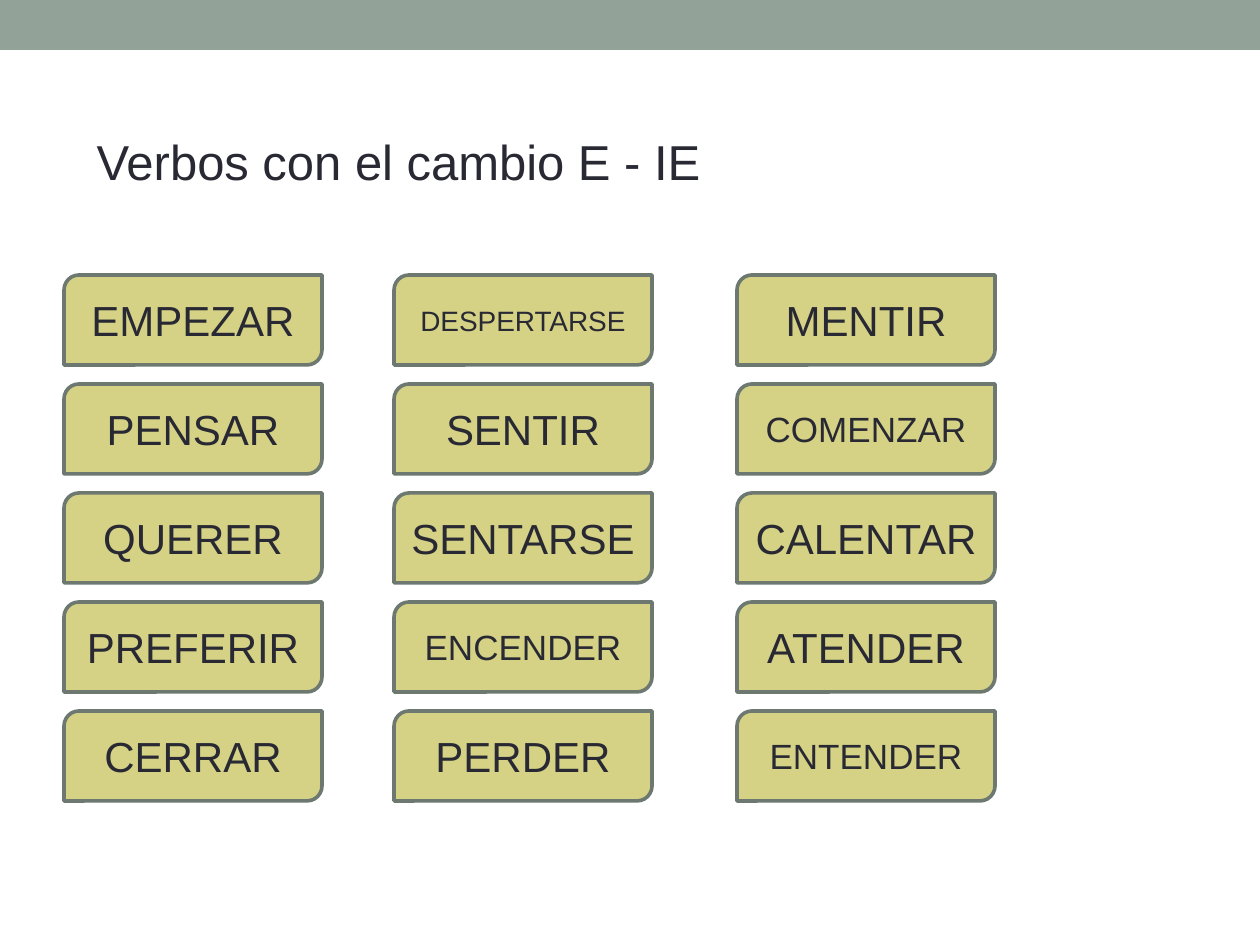
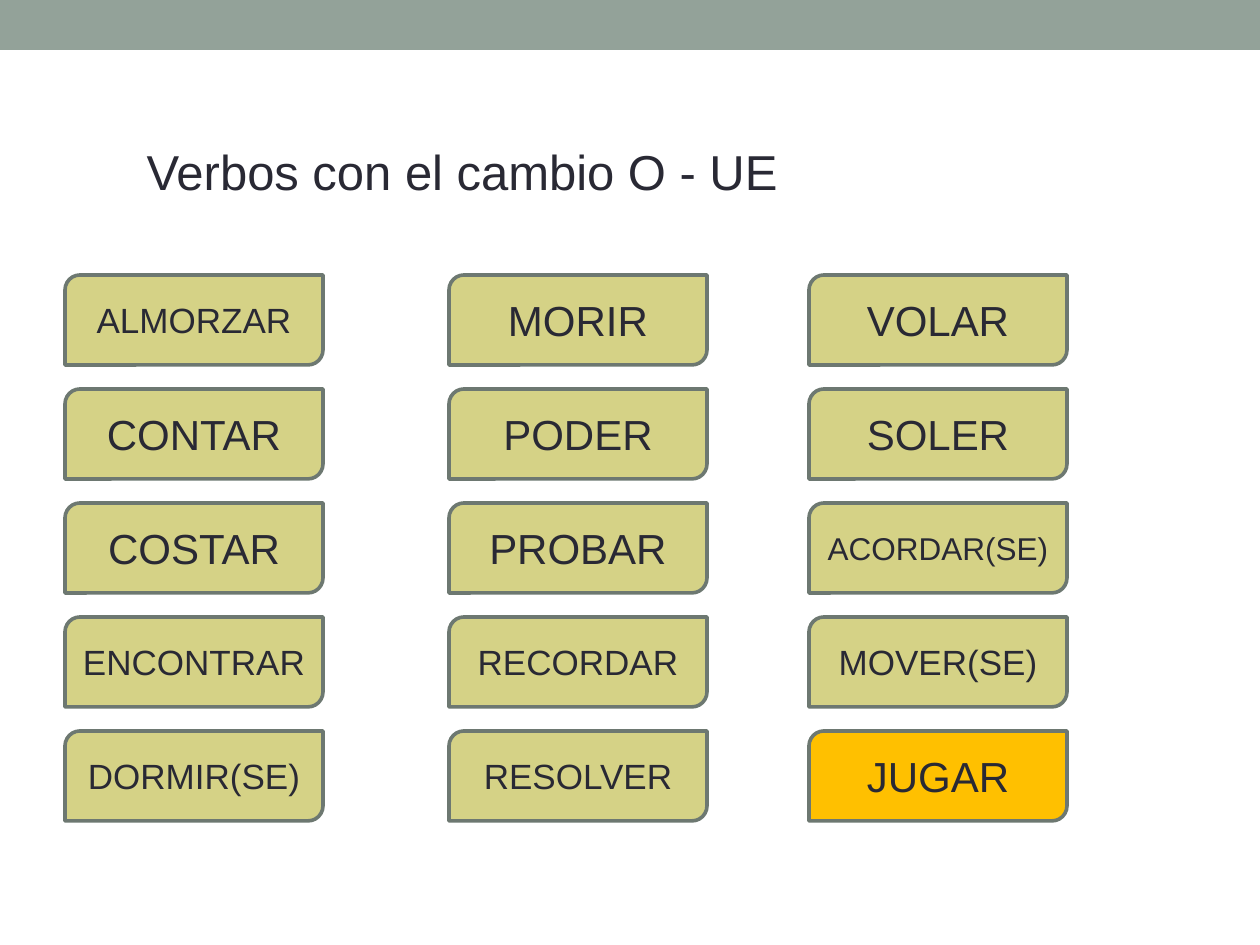
from dataclasses import dataclass

from pptx import Presentation
from pptx.dml.color import RGBColor
from pptx.enum.shapes import MSO_SHAPE
from pptx.enum.text import MSO_ANCHOR, MSO_AUTO_SIZE, PP_ALIGN
from pptx.util import Emu, Pt

EMU_PER_PX = 914400 / 126
SLIDE_W, SLIDE_H = 1260, 945
BAND_H = 50
CARD_W, CARD_H = 258, 90
CARDS_TOP = 275
TITLE_ONLY = 5


@dataclass(frozen=True)
class Theme:
    font: str = "Arial"
    band: RGBColor = RGBColor(0x93, 0xA2, 0x99)
    ink: RGBColor = RGBColor(0x29, 0x29, 0x34)
    card: RGBColor = RGBColor(0xD5, 0xD2, 0x86)
    highlight: RGBColor = RGBColor(0xFF, 0xC0, 0x00)
    outline: RGBColor = RGBColor(0x6D, 0x78, 0x71)
    outline_pt: float = 2.08
    title_pt: int = 28
    large: int = 24
    medium: int = 20
    small: int = 18
    tiny: int = 16


THEME = Theme()

# Verbs not listed here are set in the large size.
VERB_SIZES = {
    "DESPERTARSE": THEME.tiny,
    "ACORDAR(SE)": THEME.small,
    **dict.fromkeys(
        ["ENCENDER", "COMENZAR", "ENTENDER", "ALMORZAR", "ENCONTRAR",
         "DORMIR(SE)", "RECORDAR", "RESOLVER", "MOVER(SE)"],
        THEME.medium),
}
IRREGULAR = {"JUGAR"}

E_IE_COLUMNS = {
    64: ["EMPEZAR", "PENSAR", "QUERER", "PREFERIR", "CERRAR"],
    394: ["DESPERTARSE", "SENTIR", "SENTARSE", "ENCENDER", "PERDER"],
    737: ["MENTIR", "COMENZAR", "CALENTAR", "ATENDER", "ENTENDER"],
}
O_UE_COLUMNS = {
    65: ["ALMORZAR", "CONTAR", "COSTAR", "ENCONTRAR", "DORMIR(SE)"],
    449: ["MORIR", "PODER", "PROBAR", "RECORDAR", "RESOLVER"],
    809: ["VOLAR", "SOLER", "ACORDAR(SE)", "MOVER(SE)", "JUGAR"],
}


def px(n):
    return Emu(round(n * EMU_PER_PX))


def add_run(p, text, size):
    r = p.add_run()
    r.text = text
    r.font.name = THEME.font
    r.font.size = Pt(size)
    r.font.color.rgb = THEME.ink


def add_filled_shape(s, kind, x, y, w, h, color):
    sp = s.shapes.add_shape(kind, px(x), px(y), px(w), px(h))
    sp.shadow.inherit = False
    sp.fill.solid()
    sp.fill.fore_color.rgb = color
    return sp


def move_band_to_master(prs, s):
    """Draw the top band and place it behind everything on the master."""
    band = add_filled_shape(s, MSO_SHAPE.RECTANGLE, 0, 0, SLIDE_W, BAND_H,
                            THEME.band)
    band.line.fill.background()
    # The first two children of a shape tree are its properties.
    prs.slide_master.shapes.element.insert(2, band.element)


def set_title(s, text, x, y, w, h):
    title = s.shapes.title
    title.left, title.top, title.width, title.height = map(px, (x, y, w, h))
    tf = title.text_frame
    tf.word_wrap = False
    tf.auto_size = MSO_AUTO_SIZE.SHAPE_TO_FIT_TEXT
    tf.vertical_anchor = MSO_ANCHOR.TOP
    p = tf.paragraphs[0]
    p.alignment = PP_ALIGN.LEFT
    add_run(p, text, THEME.title_pt)


def add_verb_card(s, verb, x, y):
    color = THEME.highlight if verb in IRREGULAR else THEME.card
    sp = add_filled_shape(s, MSO_SHAPE.ROUND_2_DIAG_RECTANGLE, x, y,
                          CARD_W, CARD_H, color)
    sp.line.color.rgb = THEME.outline
    sp.line.width = Pt(THEME.outline_pt)
    tf = sp.text_frame
    tf.word_wrap = True
    tf.vertical_anchor = MSO_ANCHOR.MIDDLE
    p = tf.paragraphs[0]
    p.alignment = PP_ALIGN.CENTER
    add_run(p, verb, VERB_SIZES.get(verb, THEME.large))


def add_verb_columns(s, columns, row_pitch):
    for x, verbs in columns.items():
        for row, verb in enumerate(verbs):
            add_verb_card(s, verb, x, CARDS_TOP + row * row_pitch)


def add_verb_slide(prs, title, title_box, columns, row_pitch):
    s = prs.slides.add_slide(prs.slide_layouts[TITLE_ONLY])
    set_title(s, title, *title_box)
    add_verb_columns(s, columns, row_pitch)
    return s


def main():
    prs = Presentation()
    prs.slide_width, prs.slide_height = px(SLIDE_W), px(SLIDE_H)
    s = add_verb_slide(prs, "Verbos con el cambio E - IE",
                       (84, 125, 653, 72), E_IE_COLUMNS, 109)
    move_band_to_master(prs, s)
    add_verb_slide(prs, "Verbos con el cambio O - UE",
                   (134, 135, 664, 72), O_UE_COLUMNS, 114)
    prs.save("out.pptx")


if __name__ == "__main__":
    main()
